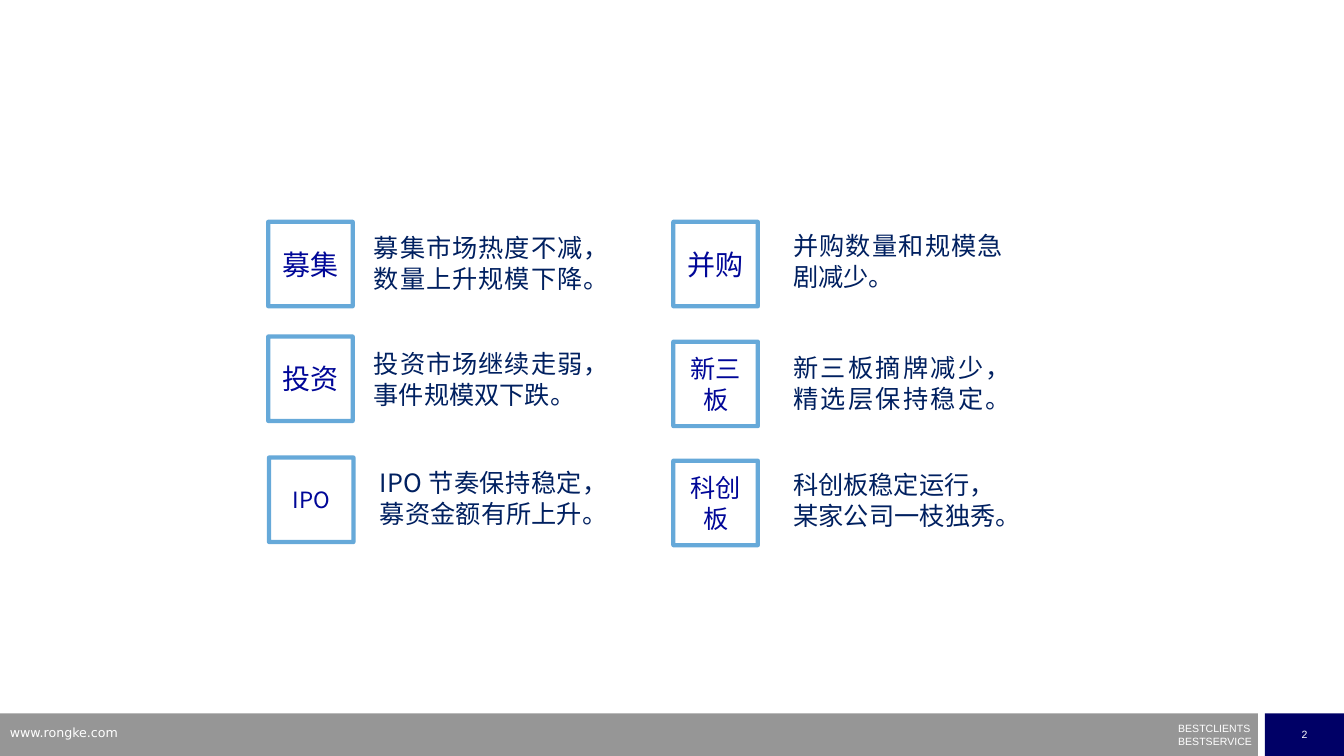
"""Build a slide that sums up six markets, with a footer bar."""
import pptx
import pptx.util
import pptx.dml.color
import pptx.enum.shapes
import pptx.enum.text
import pptx.oxml
import pptx.oxml.ns

Cm = pptx.util.Cm
Pt = pptx.util.Pt
RGBColor = pptx.dml.color.RGBColor
ALIGN = pptx.enum.text.PP_ALIGN
MIDDLE = pptx.enum.text.MSO_ANCHOR.MIDDLE
GROW = pptx.enum.text.MSO_AUTO_SIZE.SHAPE_TO_FIT_TEXT
RECT = pptx.enum.shapes.MSO_SHAPE.RECTANGLE

WHITE = RGBColor(0xFF, 0xFF, 0xFF)
GREY = RGBColor(0x96, 0x96, 0x96)
NAVY = RGBColor(0x00, 0x00, 0x66)
BLUE = RGBColor(0x00, 0x70, 0xC0)
INK = RGBColor(0x00, 0x07, 0x98)
DARK = RGBColor(0x00, 0x20, 0x60)
SIDE = 2.13


def write(shape, lines, face, size, color, align):
    """Fill a shape with one paragraph per line."""
    frame = shape.text_frame
    frame.word_wrap = True
    frame.text = "\n".join(lines)
    for para in frame.paragraphs:
        para.alignment = align
        para.font.name = face
        para.font.size = Pt(size)
        para.font.color.rgb = color
        props = para._p.pPr.find(pptx.oxml.ns.qn("a:defRPr"))
        asian = pptx.oxml.parse_xml(
            f'<a:ea {pptx.oxml.ns.nsdecls("a")} typeface="{face}"/>')
        props.find(pptx.oxml.ns.qn("a:latin")).addnext(asian)
    return frame


def block(left, top, width, height, fill=None):
    """Add a plain rectangle with no line."""
    shape = slide.shapes.add_shape(RECT, Cm(left), Cm(top), Cm(width), Cm(height))
    shape.shadow.inherit = False
    shape.line.fill.background()
    if fill is None:
        shape.fill.background()
    else:
        shape.fill.solid()
        shape.fill.fore_color.rgb = fill
    return shape


deck = pptx.Presentation()
deck.slide_width = Cm(33.87)
deck.slide_height = Cm(19.05)
slide = deck.slides.add_slide(deck.slide_layouts[6])

block(0, 17.98, 31.7, 1.07, GREY)
page = block(31.88, 17.98, 1.99, 1.07, NAVY)
frame = write(page, ["2"], "Arial", 7.5, WHITE, ALIGN.CENTER)
frame.vertical_anchor = MIDDLE
frame.word_wrap = False

motto = slide.shapes.add_textbox(Cm(29.69), Cm(18.34), Cm(1.93), Cm(0.51))
frame = write(motto, ["BESTCLIENTS", "BESTSERVICE"], "Arial", 7.5, WHITE, ALIGN.LEFT)
frame.margin_left = frame.margin_right = 0
frame.margin_top = frame.margin_bottom = 0
for para in frame.paragraphs:
    para.line_spacing = 0.5
frame.paragraphs[1].space_before = Pt(4.3)

site = slide.shapes.add_textbox(0, Cm(18.14), Cm(8.13), Cm(0.66))
write(site, ["www.rongke.com"], "DejaVu Sans", 9, WHITE, ALIGN.LEFT)

MARKETS = [
    ("募集", 20, 6.76, 5.59, 9.17, 5.74, 5.79,
     ["募集市场热度不减，", "数量上升规模下降。"]),
    ("投资", 20, 6.76, 8.48, 9.17, 8.66, 5.79,
     ["投资市场继续走弱，事件规模双下跌。"]),
    ("IPO", 16, 6.78, 11.53, 9.32, 11.66, 5.61,
     ["IPO 节奏保持稳定，", "募资金额有所上升。"]),
    ("并购", 20, 16.97, 5.59, 19.74, 5.69, 5.79,
     ["并购数量和规模急剧减少。"]),
    ("新三板", 18, 16.97, 8.61, 19.74, 8.76, 5.36,
     ["新三板摘牌减少，", "精选层保持稳定。"]),
    ("科创板", 18, 16.97, 11.61, 19.74, 11.71, 5.61,
     ["科创板稳定运行，", "某家公司一枝独秀。"]),
]
for label, size, left, top, note_left, note_top, width, lines in MARKETS:
    tile = block(left, top, SIDE, SIDE)
    tile.line.color.rgb = BLUE
    tile.line.width = Pt(3)
    tint = tile.line._ln.find(".//" + pptx.oxml.ns.qn("a:srgbClr"))
    tint.append(pptx.oxml.parse_xml(
        f'<a:alpha {pptx.oxml.ns.nsdecls("a")} val="60000"/>'))
    frame = write(tile, [label], "Noto Sans CJK JP", size, INK, ALIGN.CENTER)
    frame.vertical_anchor = MIDDLE

    note = slide.shapes.add_textbox(Cm(note_left), Cm(note_top), Cm(width), Cm(1.8))
    frame = write(note, lines, "Noto Sans CJK SC", 18, DARK, ALIGN.JUSTIFY)
    frame.auto_size = GROW

deck.save("out.pptx")
